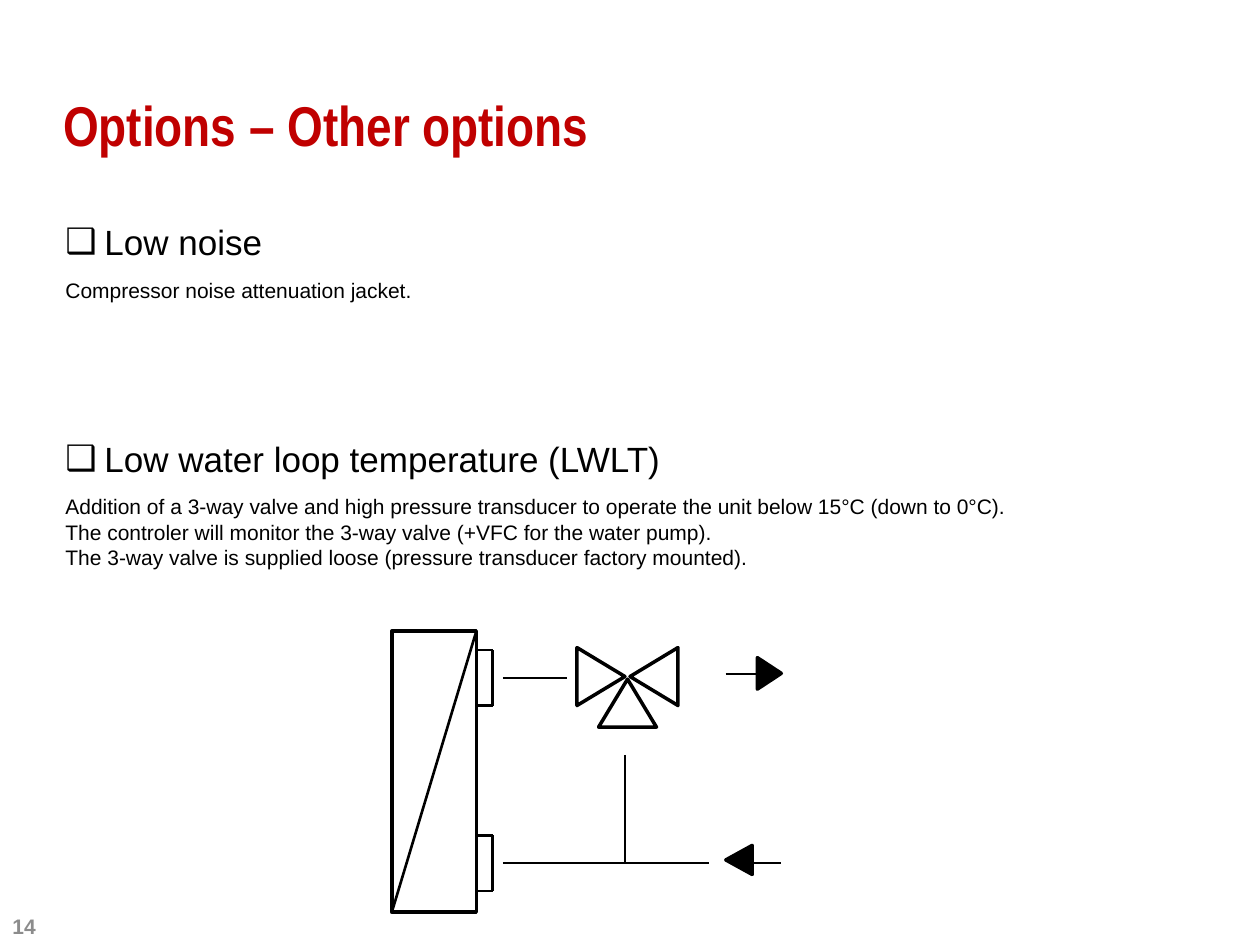
import pptx
import pptx.dml.color
import pptx.enum.shapes
import pptx.enum.text
import pptx.oxml.ns
import pptx.util
from lxml import etree

Pt = pptx.util.Pt
RGBColor = pptx.dml.color.RGBColor
ANCHOR = pptx.enum.text.MSO_ANCHOR
SHAPE = pptx.enum.shapes.MSO_SHAPE
qn = pptx.oxml.ns.qn

RED = RGBColor(0xC0, 0x00, 0x00)
BLACK = RGBColor(0x00, 0x00, 0x00)
GRAY = RGBColor(0x8C, 0x8C, 0x8C)

# Content
TITLE = "Options – Other options"
PAGE_NUMBER = "14"
SECTIONS = [  # top, heading, lines
    (122.4, "Low noise", ["Compressor noise attenuation jacket."]),
    (246.2, "Low water loop temperature (LWLT)", [
        "Addition of a 3-way valve and high pressure transducer to operate "
        "the unit below 15°C (down to 0°C).",
        "The controler will monitor the 3-way valve (+VFC for the water pump).",
        "The 3-way valve is supplied loose (pressure transducer factory mounted).",
    ]),
]
TEXT_LEFT, TEXT_WIDTH = 30.2, 689.8
HEADING_HEIGHT, LINE_HEIGHT, BULLET_INDENT = 32.4, 14.6, 22.3

# Diagram: heat exchanger, its two ports, pipes, valve and flow arrows
EXCHANGER = (223.9, 360.7, 48.3, 160.6)
PORT_DEPTH, PORT_HEIGHT = 9.3, 31.7
PORT_TOPS = [371.5, 477.4]
PIPES = [  # x1, y1, x2, y2
    (287.3, 387.4, 324, 387.4),
    (287.3, 493.2, 405.4, 493.2),
    (357.1, 431.3, 357.1, 493.9),
    (414.7, 385.2, 432.7, 385.2),
    (429.8, 493.2, 446.4, 493.2),
]
TRIANGLES = [  # centre x, centre y, width, height, rotation, fill
    (358.6, 401.8, 33.1, 27.4, 0, None),
    (373.7, 386.6, 33.1, 27.4, 270, None),
    (343.4, 386.6, 33.1, 27.4, 90, None),
    (439.6, 384.8, 18, 13.7, 90, BLACK),
    (422.3, 491.4, 16.6, 15.1, 270, BLACK),
]


def place(shape, left, top, width, height):
    shape.left, shape.top = Pt(left), Pt(top)
    shape.width, shape.height = Pt(width), Pt(height)


def write(shape, lines, size, color, bold=False, name="Arial",
          anchor=ANCHOR.TOP, bullet=None):
    frame = shape.text_frame
    frame.text = "\n".join(lines)
    frame.word_wrap = True
    frame.auto_size = pptx.enum.text.MSO_AUTO_SIZE.NONE
    frame.vertical_anchor = anchor
    for paragraph in frame.paragraphs:
        properties = paragraph._p.get_or_add_pPr()
        indent = Pt(BULLET_INDENT) if bullet else 0
        properties.set("marL", str(indent))
        properties.set("indent", str(-indent))
        if bullet:
            etree.SubElement(properties, qn("a:buChar")).set("char", bullet)
        else:
            etree.SubElement(properties, qn("a:buNone"))
        paragraph.alignment = pptx.enum.text.PP_ALIGN.LEFT
        paragraph.space_before = Pt(0)
        paragraph.line_spacing = 1.0
        font = paragraph.font
        font.name, font.size, font.bold = name, Pt(size), bold
        font.color.rgb = color


def add_outline(slide, kind, box, fill=None):
    shape = slide.shapes.add_shape(kind, *map(Pt, box))
    shape.shadow.inherit = False
    shape.line.color.rgb = BLACK
    shape.line.width = Pt(2)
    if fill is None:
        shape.fill.background()
    else:
        shape.fill.solid()
        shape.fill.fore_color.rgb = fill
    return shape


def add_line(slide, *ends):
    line = slide.shapes.add_connector(
        pptx.enum.shapes.MSO_CONNECTOR.STRAIGHT, *map(Pt, ends))
    line.line.color.rgb = BLACK
    line.line.width = Pt(1.5)
    etree.SubElement(line._element.spPr, qn("a:effectLst"))


def add_diagram(slide):
    left, top, width, height = EXCHANGER
    right = left + width
    add_outline(slide, SHAPE.RECTANGLE, EXCHANGER)
    add_line(slide, left, top + height, right, top)

    # Ports: two short edges and one long edge each
    outer = right + PORT_DEPTH
    for port_top in PORT_TOPS:
        port_bottom = port_top + PORT_HEIGHT
        add_line(slide, outer, port_top, outer, port_bottom)
        for y in (port_top, port_bottom):
            add_line(slide, right, y, outer, y)

    for pipe in PIPES:
        add_line(slide, *pipe)
    for x, y, width, height, rotation, fill in TRIANGLES:
        box = (x - width / 2, y - height / 2, width, height)
        triangle = add_outline(slide, SHAPE.ISOSCELES_TRIANGLE, box, fill)
        triangle.rotation = rotation


def main():
    presentation = pptx.Presentation()
    presentation.slide_width, presentation.slide_height = Pt(720), Pt(540)
    # Comparison layout: a title and two pairs of heading and body
    slide = presentation.slides.add_slide(presentation.slide_layouts[4])

    # Title
    title = slide.shapes.title
    place(title, 36, 21.6, 647.3, 68.4)
    write(title, [TITLE], 32, RED, True, "Arial Narrow", ANCHOR.BOTTOM)
    frame = title.text_frame
    frame.margin_left = frame.margin_right = 0
    frame.margin_top = frame.margin_bottom = 0

    # Sections
    for index, (top, heading_text, lines) in enumerate(SECTIONS):
        heading = slide.placeholders[1 + 2 * index]
        place(heading, TEXT_LEFT, top, TEXT_WIDTH, HEADING_HEIGHT)
        write(heading, [heading_text], 20, BLACK, bullet="❑")
        body = slide.placeholders[2 + 2 * index]
        place(body, TEXT_LEFT, top + HEADING_HEIGHT, TEXT_WIDTH,
              7.2 + LINE_HEIGHT * len(lines))
        write(body, lines, 12, BLACK)

    # Page number
    number = slide.shapes.add_textbox(0, Pt(511.2), Pt(77.8), Pt(28.8))
    write(number, [PAGE_NUMBER], 12, GRAY, True, anchor=ANCHOR.BOTTOM)

    add_diagram(slide)
    presentation.save("out.pptx")


if __name__ == "__main__":
    main()
